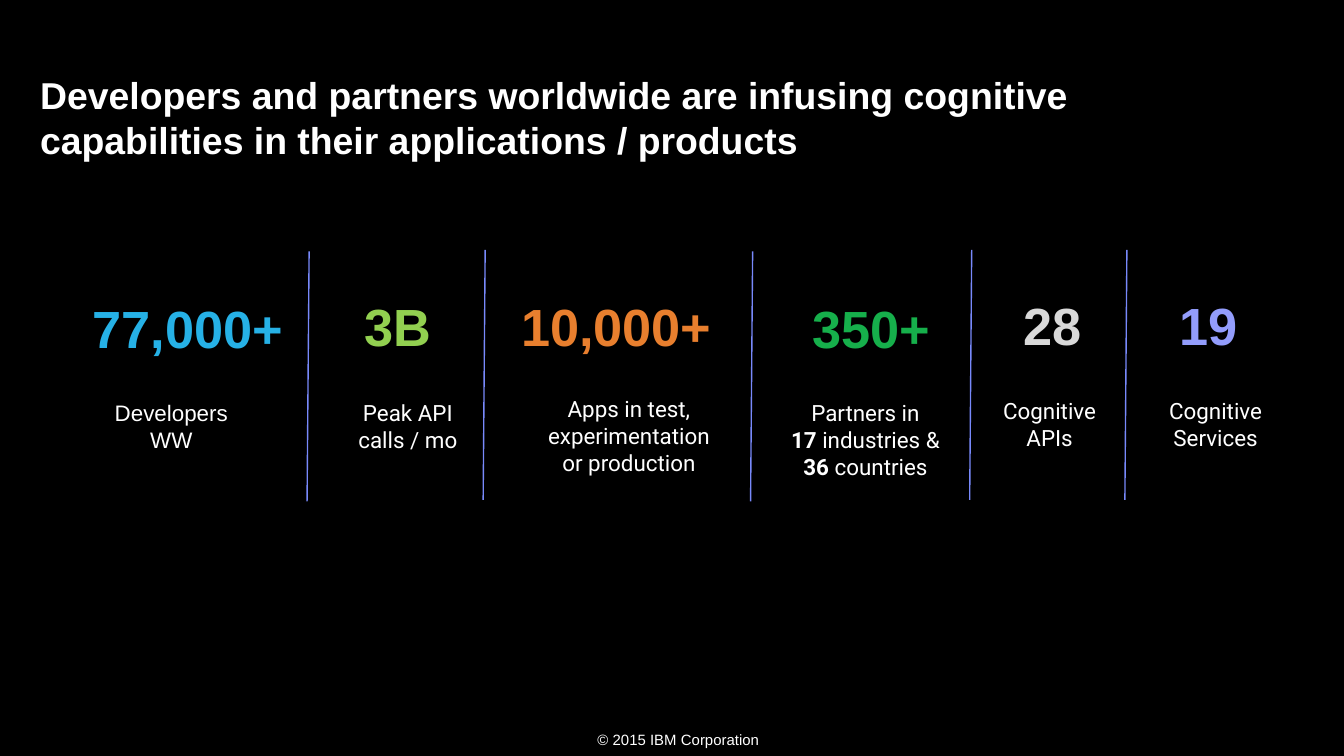
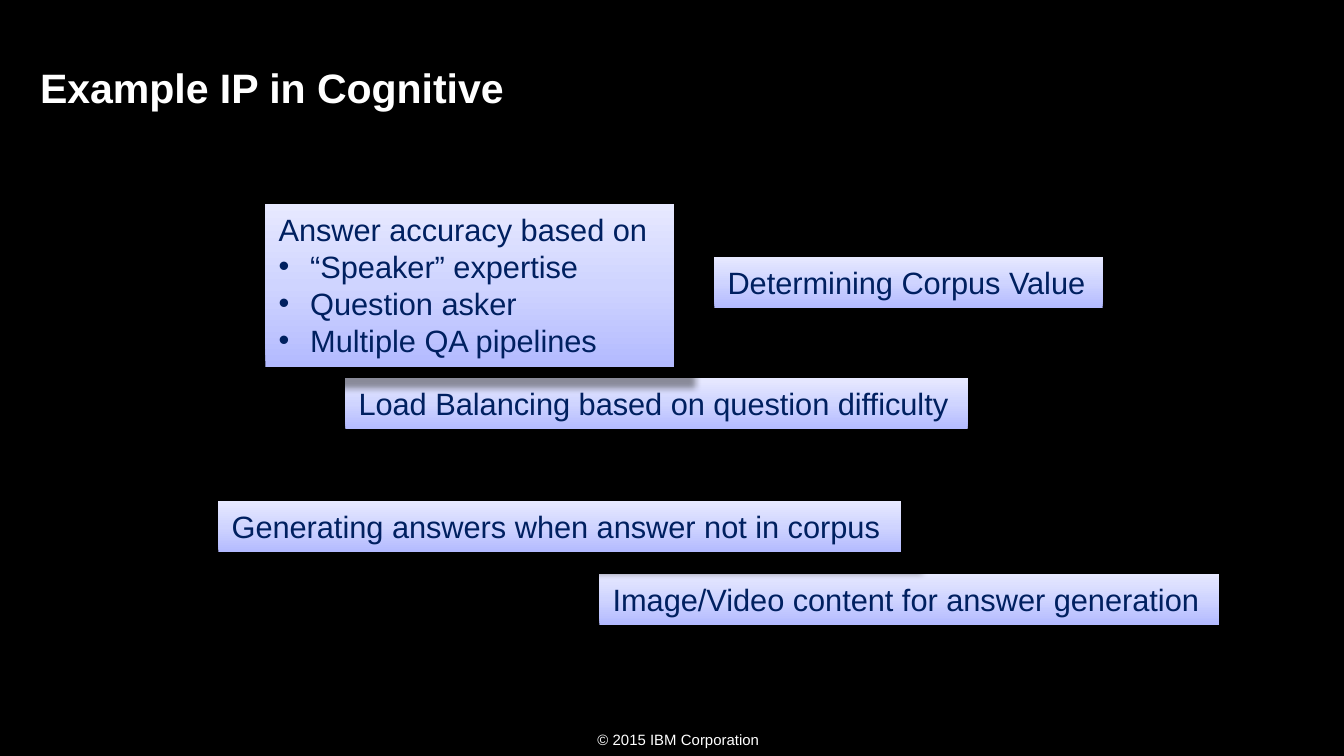
from copy import deepcopy
from dataclasses import dataclass
from typing import NamedTuple

from lxml.etree import SubElement
from pptx import Presentation
from pptx.dml.color import RGBColor
from pptx.enum.shapes import MSO_CONNECTOR, MSO_SHAPE
from pptx.enum.text import MSO_ANCHOR, MSO_AUTO_SIZE, PP_ALIGN
from pptx.oxml.ns import qn
from pptx.util import Emu, Pt

PX = 4572  # 200 px to the inch


@dataclass(frozen=True)
class Theme:
    background: str = "000000"
    text: str = "FFFFFF"
    divider: str = "7889FB"
    card_text: str = "002060"
    card_fill: tuple[str, ...] = ("B3BAFF", "CFD4FF", "E7E9FF")
    font: str = "Arial"
    label_font: str = "Roboto"
    footer_size: float = 8
    label_size: float = 12
    card_size: float = 16.5
    title_size: float = 20
    short_title_size: float = 22
    figure_size: float = 28


THEME = Theme()


class Box(NamedTuple):
    x: int
    y: int
    w: int
    h: int

    def emu(self) -> list[Emu]:
        return [px(v) for v in self]


class Style(NamedTuple):
    size: float
    color: str = THEME.text
    font: str = THEME.font
    bold: bool = False


class Stat(NamedTuple):
    """A large figure and its label; asterisks in the label enclose bold text."""
    figure: str
    color: str
    figure_box: Box
    label: list[str]
    label_box: Box
    label_font: str = THEME.label_font


class Card(NamedTuple):
    box: Box
    heading: str
    bullets: tuple[str, ...] = ()


SLIDE_SIZE = (2000, 1125)
TITLE = Box(40, 98, 1644, 188)
FOOTER = Box(850, 1078, 300, 30)
DEFAULT_INSETS = (20, 10, 20, 10)
FIGURE_INSETS = (12, 6, 12, 6)
LABEL_INSETS = (0, 6, 0, 0)

STATS = [
    Stat("77,000+", "26B1E6", Box(101, 435, 356, 108),
         ["Developers\vWW"], Box(127, 588, 256, 88), THEME.font),
    Stat("3B", "92D050", Box(473, 432, 238, 108),
         ["Peak API\vcalls / mo"], Box(489, 588, 236, 88)),
    Stat("10,000+", "E87F2E", Box(760, 432, 314, 108),
         ["Apps in test,\vexperimentation\vor production"], Box(801, 582, 270, 128)),
    Stat("350+", "16AF4B", Box(1152, 435, 290, 108),
         ["Partners in", "*17* industries &\v*36* countries"],
         Box(1144, 588, 288, 128)),
    Stat("28", "D9D9D9", Box(1422, 430, 290, 108),
         ["Cognitive", "APIs"], Box(1418, 585, 288, 88)),
    Stat("19", "939DFC", Box(1718, 430, 162, 108),
         ["Cognitive", "Services"], Box(1665, 585, 288, 88)),
]
DIVIDERS = [(460, 374), (722, 372), (1120, 374), (1446, 372), (1677, 372)]
DIVIDER_HEIGHT = 372
DIVIDER_LEAN = 3

CARDS = [
    Card(Box(1063, 382, 578, 76), "Determining Corpus Value"),
    Card(Box(892, 854, 922, 76), "Image/Video content for answer generation"),
    Card(Box(325, 746, 1016, 76), "Generating answers when answer not in corpus"),
    Card(Box(514, 563, 926, 76), "Load Balancing based on question difficulty"),
    Card(Box(395, 304, 608, 242), "Answer accuracy based on",
         ("“Speaker” expertise", "Question asker", "Multiple QA pipelines")),
]
BULLET_INDENT = 47
SHADOW_DISTANCE = 44
SHADOW_BLUR = 10


def px(value: int) -> Emu:
    return Emu(value * PX)


def rgb(color: str) -> RGBColor:
    return RGBColor.from_string(color)


def style_font(font, style: Style, bold: bool = False) -> None:
    font.size = Pt(style.size)
    font.name = style.font
    font.bold = style.bold or bold
    font.color.rgb = rgb(style.color)


def write_paragraph(p, text: str, style: Style) -> None:
    """Fill a paragraph, breaking lines at vertical tabs."""
    for i, line in enumerate(text.split("\v")):
        if i:
            p.add_line_break()
        for j, part in enumerate(line.split("*")):
            if part:
                r = p.add_run()
                r.text = part
                style_font(r.font, style, bold=j % 2 == 1)
    for br in p._p.findall(qn("a:br")):
        br.append(deepcopy(p.runs[0].font._element))


def set_insets(tf, insets: tuple[int, int, int, int]) -> None:
    (tf.margin_left, tf.margin_top,
     tf.margin_right, tf.margin_bottom) = map(px, insets)


def add_text(s, box: Box, paragraphs: list[str], style: Style,
             align=PP_ALIGN.LEFT, insets=DEFAULT_INSETS, grow: bool = False):
    tf = s.shapes.add_textbox(*box.emu()).text_frame
    tf.word_wrap = True
    tf.auto_size = MSO_AUTO_SIZE.SHAPE_TO_FIT_TEXT if grow else MSO_AUTO_SIZE.NONE
    tf.vertical_anchor = MSO_ANCHOR.TOP
    set_insets(tf, insets)
    for i, text in enumerate(paragraphs):
        p = tf.add_paragraph() if i else tf.paragraphs[0]
        p.alignment = align
        write_paragraph(p, text, style)
    return tf


def add_slide(prs, title: str, title_size: float, line_spacing: float = 1.0):
    s = prs.slides.add_slide(prs.slide_layouts[6])
    s.background.fill.solid()
    s.background.fill.fore_color.rgb = rgb(THEME.background)
    add_text(s, FOOTER, ["© 2015 IBM Corporation"], Style(THEME.footer_size),
             PP_ALIGN.RIGHT)
    tf = add_text(s, TITLE, [title], Style(title_size, bold=True))
    tf.paragraphs[0].line_spacing = line_spacing
    return s


def add_stat(s, stat: Stat) -> None:
    add_text(s, stat.figure_box, [stat.figure],
             Style(THEME.figure_size, stat.color, bold=True),
             PP_ALIGN.CENTER, FIGURE_INSETS, grow=True)
    add_text(s, stat.label_box, stat.label,
             Style(THEME.label_size, font=stat.label_font),
             PP_ALIGN.CENTER, LABEL_INSETS, grow=True)


def add_divider(s, x: int, y: int) -> None:
    line = s.shapes.add_connector(MSO_CONNECTOR.STRAIGHT, px(x), px(y),
                                  px(x - DIVIDER_LEAN), px(y + DIVIDER_HEIGHT))
    line.line.color.rgb = rgb(THEME.divider)
    line.line.width = Pt(0.75)
    SubElement(line._element.spPr, qn("a:effectLst"))


def fill_gradient(sp) -> None:
    sp.fill.gradient()
    sp.fill.gradient_angle = 90
    stops = sp._element.spPr.find(".//" + qn("a:gsLst"))
    stops.insert(1, deepcopy(stops[0]))
    last = len(THEME.card_fill) - 1
    for i, (stop, color) in enumerate(zip(sp.fill.gradient_stops, THEME.card_fill)):
        stop.color.rgb = rgb(color)
        stop.position = i / last


def add_shadow(sp) -> None:
    sp.shadow.inherit = False
    effects = sp._element.spPr.find(qn("a:effectLst"))
    shadow = SubElement(effects, qn("a:outerShdw"), blurRad=str(px(SHADOW_BLUR)),
                        dist=str(px(SHADOW_DISTANCE)), dir="2700000",
                        algn="tl", rotWithShape="0")
    color = SubElement(shadow, qn("a:srgbClr"), val="000000")
    SubElement(color, qn("a:alpha"), val="40000")


def add_bullet(p) -> None:
    pPr = p._p.get_or_add_pPr()
    pPr.set("marL", str(px(BULLET_INDENT)))
    pPr.set("indent", str(px(-BULLET_INDENT)))
    SubElement(pPr, qn("a:buFont"), typeface=THEME.font)
    SubElement(pPr, qn("a:buChar"), char="•")


def add_card(s, card: Card) -> None:
    sp = s.shapes.add_shape(MSO_SHAPE.RECTANGLE, *card.box.emu())
    fill_gradient(sp)
    sp.line.fill.background()
    add_shadow(sp)
    tf = sp.text_frame
    tf.word_wrap = False
    tf.auto_size = MSO_AUTO_SIZE.SHAPE_TO_FIT_TEXT
    tf.vertical_anchor = MSO_ANCHOR.TOP
    set_insets(tf, DEFAULT_INSETS)
    tf.text = "\n".join((card.heading, *card.bullets))
    for i, p in enumerate(tf.paragraphs):
        p.alignment = PP_ALIGN.LEFT
        if i:
            add_bullet(p)
        style_font(p.runs[0].font, Style(THEME.card_size, THEME.card_text))


def build_adoption_slide(prs) -> None:
    s = add_slide(prs, "Developers and partners worldwide are infusing cognitive "
                       "capabilities in their applications / products",
                  THEME.title_size)
    for stat in STATS:
        add_stat(s, stat)
    for x, y in DIVIDERS:
        add_divider(s, x, y)


def build_ip_slide(prs) -> None:
    s = add_slide(prs, "Example IP in Cognitive", THEME.short_title_size, 0.8)
    for card in CARDS:
        add_card(s, card)


def main() -> None:
    prs = Presentation()
    prs.slide_width, prs.slide_height = map(px, SLIDE_SIZE)
    build_adoption_slide(prs)
    build_ip_slide(prs)
    prs.save("out.pptx")


if __name__ == "__main__":
    main()
